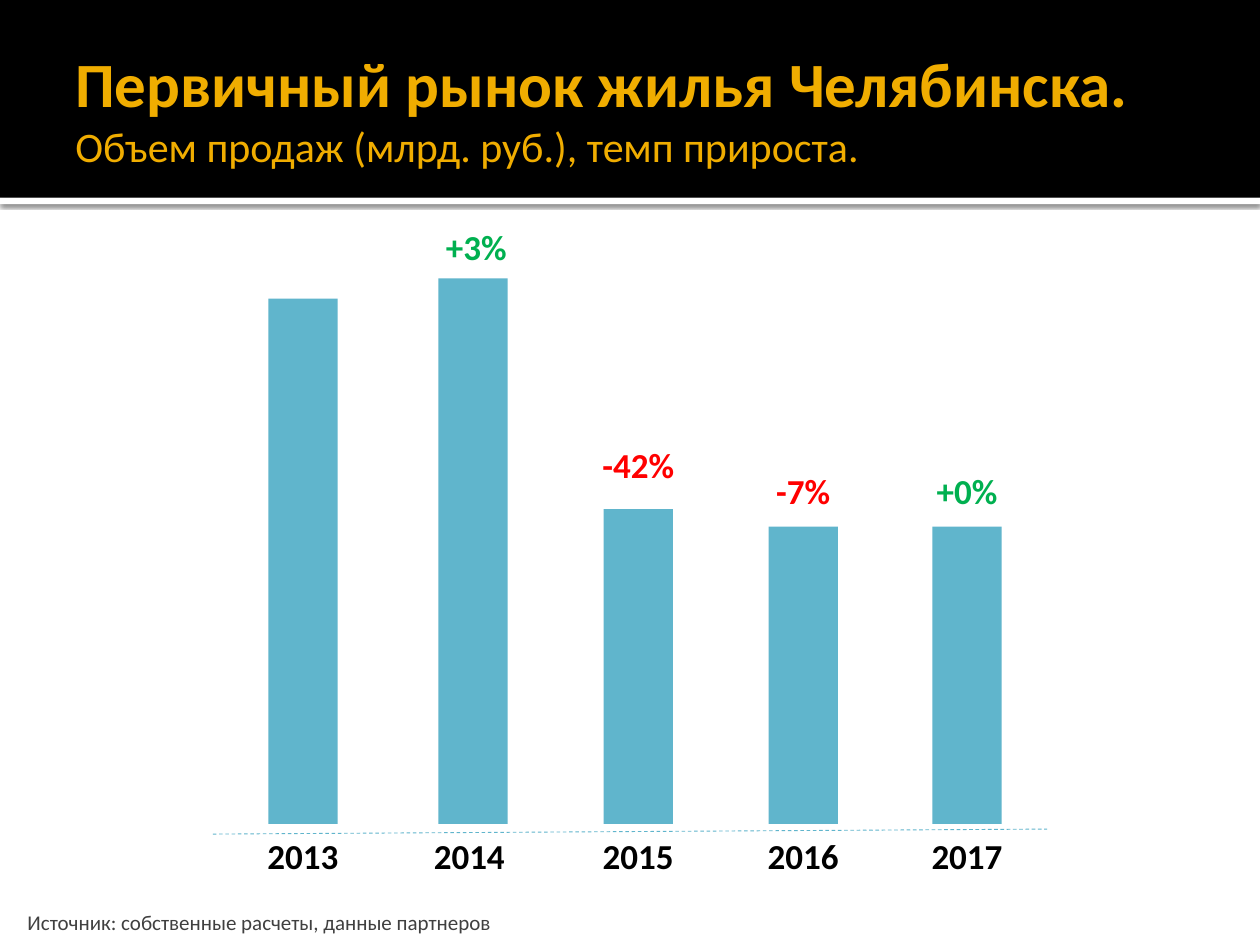
from dataclasses import dataclass

from lxml.etree import SubElement
from pptx import Presentation
from pptx.dml.color import RGBColor
from pptx.enum.dml import MSO_LINE_DASH_STYLE as Dash
from pptx.enum.shapes import MSO_CONNECTOR as Connector, MSO_SHAPE as Preset
from pptx.enum.text import MSO_ANCHOR as Anchor, MSO_AUTO_SIZE as AutoSize, PP_ALIGN as Align
from pptx.oxml.ns import qn
from pptx.shapes.autoshape import Shape
from pptx.slide import Slide
from pptx.util import Pt

BLACK = RGBColor(0x00, 0x00, 0x00)
WHITE = RGBColor(0xFF, 0xFF, 0xFF)
GOLD = RGBColor(0xF0, 0xAD, 0x00)
BLUE = RGBColor(0x60, 0xB5, 0xCC)
GREEN = RGBColor(0x00, 0xB0, 0x50)
RED = RGBColor(0xFF, 0x00, 0x00)
GRAY = RGBColor(0x40, 0x40, 0x40)

FONT = "Calibri"
SLIDE_WIDTH, SLIDE_HEIGHT = 720, 540
HEADER_HEIGHT = 113.04
BAR_WIDTH, BAR_BOTTOM = 39.6, 470.88
LABEL_WIDTH, LABEL_HEIGHT = 56.88, 31.68
YEAR_TOP = 473.04


@dataclass(frozen=True)
class Box:
    left: float
    top: float
    width: float
    height: float

    def lengths(self) -> list[Pt]:
        return [Pt(value) for value in (self.left, self.top, self.width, self.height)]


@dataclass(frozen=True)
class Run:
    text: str
    size: int
    color: RGBColor
    bold: bool = False


@dataclass(frozen=True)
class YearBar:
    year: str
    center: float
    height: float
    growth: str = ""
    growth_top: float = 0
    growth_color: RGBColor = GREEN
    growth_shift: float = 0
    year_shift: float = 0


YEAR_BARS = [
    YearBar("2013", 173.16, 300.24),
    YearBar("2014", 270.36, 311.76, "+3%", 125.28, GREEN, 1.8, -2.16),
    YearBar("2015", 364.68, 180, "-42%", 249.84, RED),
    YearBar("2016", 459, 169.92, "-7%", 264.96, RED),
    YearBar("2017", 552.6, 169.92, "+0%", 264.96, GREEN),
]


def add_rectangle(slide: Slide, box: Box, color: RGBColor) -> Shape:
    shape = slide.shapes.add_shape(Preset.RECTANGLE, *box.lengths())
    shape.shadow.inherit = False
    shape.fill.solid()
    shape.fill.fore_color.rgb = color
    shape.line.fill.background()
    return shape


def add_drop_shadow(shape: Shape) -> None:
    effects = shape._element.spPr.find(qn("a:effectLst"))
    shadow = SubElement(effects, qn("a:outerShdw"), blurRad=str(Pt(2.5)),
                        dist=str(Pt(0.8)), dir="5400000", rotWithShape="0")
    color = SubElement(shadow, qn("a:srgbClr"), val=str(BLACK))
    SubElement(color, qn("a:alpha"), val="60000")


def add_text(slide: Slide, box: Box, runs: list[Run], align: Align = Align.LEFT,
             **frame_format) -> None:
    frame = slide.shapes.add_textbox(*box.lengths()).text_frame
    settings = {"word_wrap": True, "auto_size": AutoSize.SHAPE_TO_FIT_TEXT} | frame_format
    for name, value in settings.items():
        setattr(frame, name, value)
    paragraph = frame.paragraphs[0]
    paragraph.alignment = align
    for item in runs:
        run = paragraph.add_run()
        run.text = item.text
        font_format = {"name": FONT, "size": Pt(item.size), "bold": item.bold}
        for name, value in font_format.items():
            setattr(run.font, name, value)
        run.font.color.rgb = item.color


def add_label(slide: Slide, text: str, center: float, top: float, color: RGBColor,
              wrap: bool) -> None:
    box = Box(center - LABEL_WIDTH / 2, top, LABEL_WIDTH, LABEL_HEIGHT)
    add_text(slide, box, [Run(text, 20, color, True)], Align.CENTER, word_wrap=wrap)


def add_header(slide: Slide) -> None:
    strip = add_rectangle(slide, Box(0, HEADER_HEIGHT, SLIDE_WIDTH, 3.6), WHITE)
    add_drop_shadow(strip)
    add_rectangle(slide, Box(0, 0, SLIDE_WIDTH, HEADER_HEIGHT), BLACK)
    title = [
        Run("Первичный рынок жилья Челябинска. ", 36, GOLD, True),
        Run("Объем продаж (млрд. руб.), темп прироста.", 24, GOLD),
    ]
    add_text(slide, Box(36, 12.24, 648, 98.64), title, auto_size=AutoSize.NONE,
             vertical_anchor=Anchor.MIDDLE, margin_right=Pt(3.6))


def add_year_bar(slide: Slide, bar: YearBar) -> None:
    box = Box(bar.center - BAR_WIDTH / 2, BAR_BOTTOM - bar.height, BAR_WIDTH, bar.height)
    add_rectangle(slide, box, BLUE)
    if bar.growth:
        add_label(slide, bar.growth, bar.center + bar.growth_shift, bar.growth_top,
                  bar.growth_color, wrap=False)
    add_label(slide, bar.year, bar.center + bar.year_shift, YEAR_TOP, BLACK, wrap=True)


def add_baseline(slide: Slide) -> None:
    ends = [Pt(value) for value in (121.68, 476.64, 598.32, 473.76)]
    baseline = slide.shapes.add_connector(Connector.STRAIGHT, *ends)
    baseline.line.color.rgb = BLUE
    baseline.line.width = Pt(0.5)
    baseline.line.dash_style = Dash.DASH
    SubElement(baseline._element.spPr, qn("a:effectLst"))


def main() -> None:
    presentation = Presentation()
    presentation.slide_width = Pt(SLIDE_WIDTH)
    presentation.slide_height = Pt(SLIDE_HEIGHT)
    slide = presentation.slides.add_slide(presentation.slide_layouts[6])
    add_header(slide)
    for bar in YEAR_BARS:
        add_year_bar(slide, bar)
    add_baseline(slide)
    source = Run("Источник: собственные расчеты, данные партнеров", 12, GRAY)
    add_text(slide, Box(8.64, 516.24, 453.6, 21.6), [source])
    presentation.save("out.pptx")


if __name__ == "__main__":
    main()
